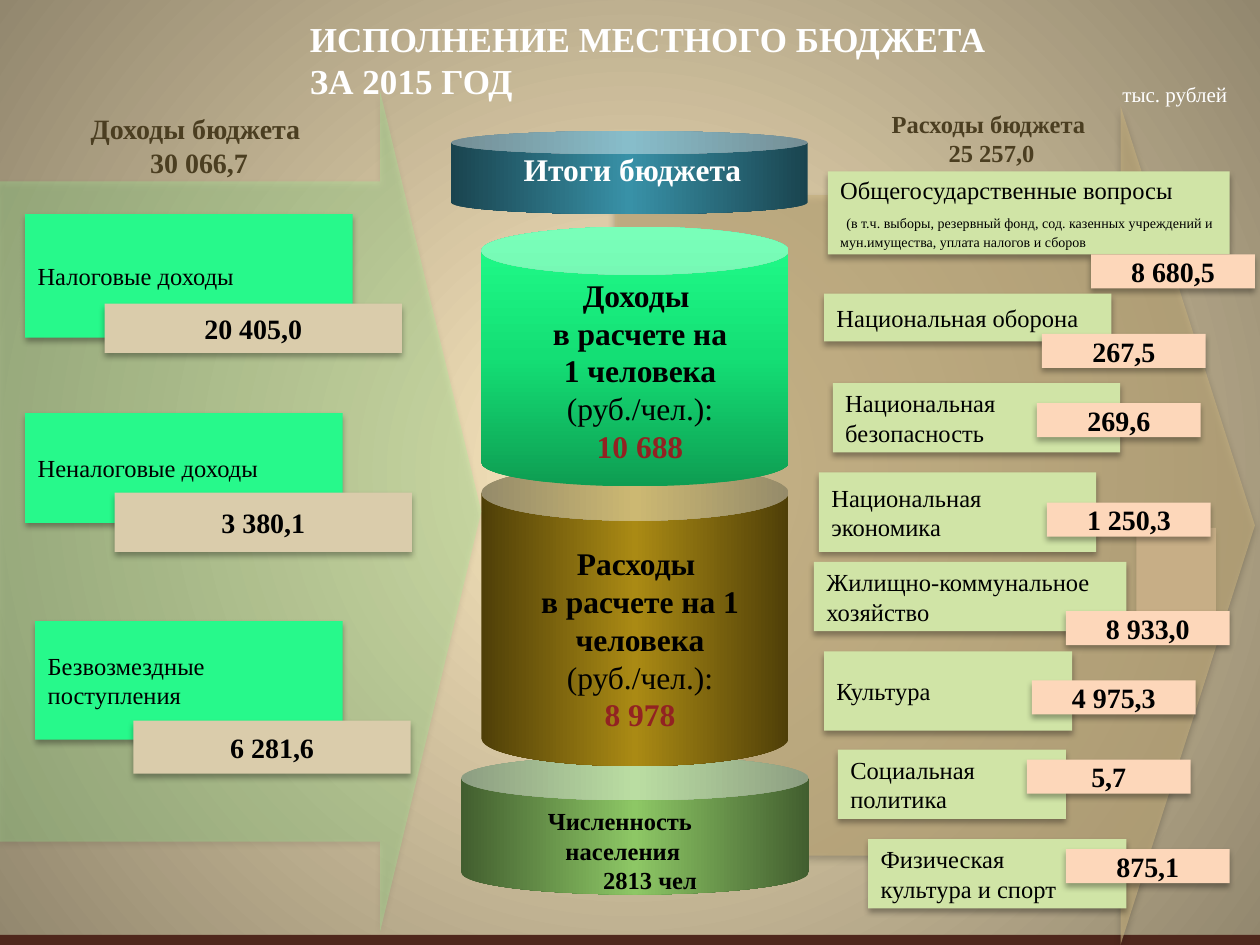
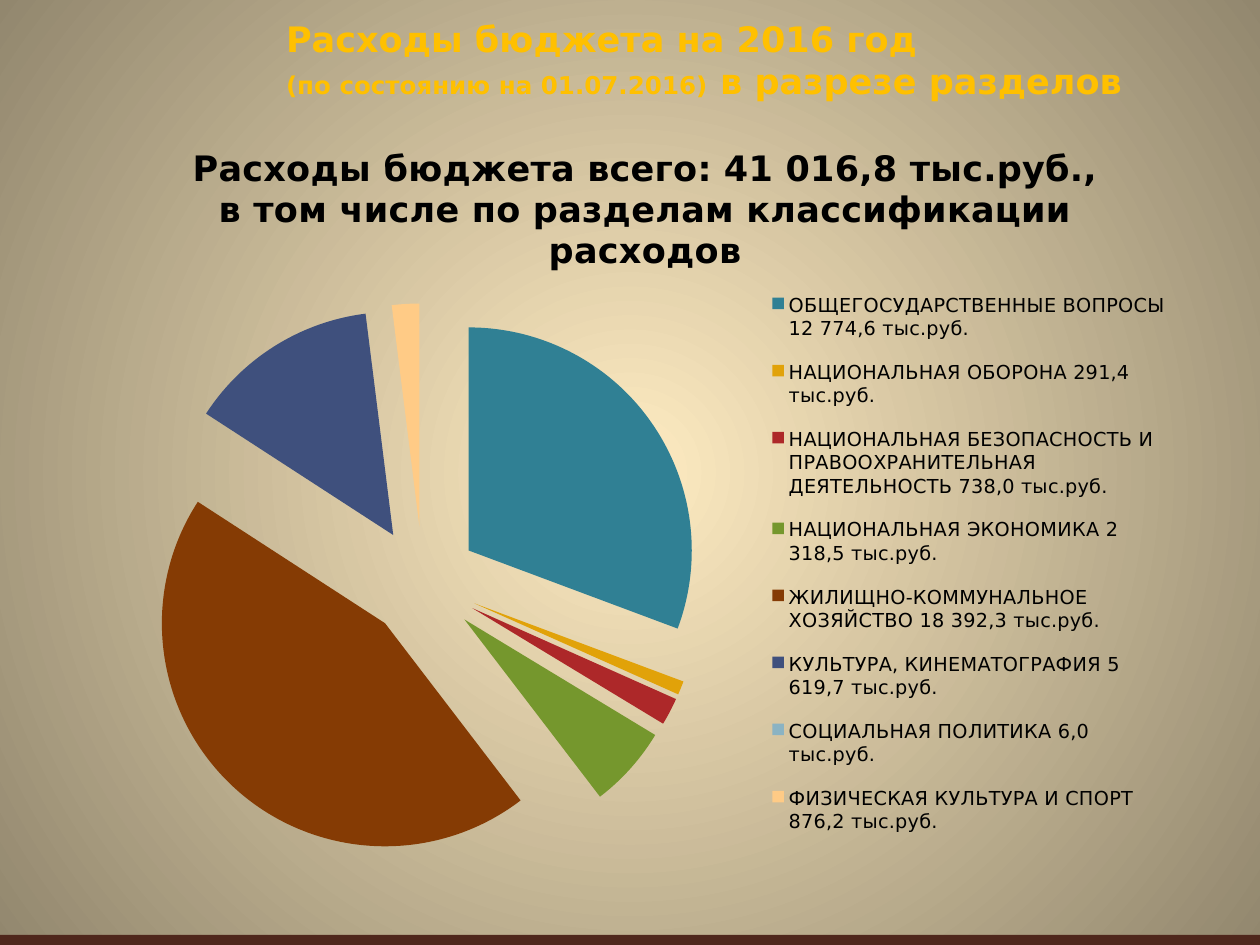
import copy

import pptx
import pptx.chart.data
import pptx.dml.color
import pptx.enum.chart
import pptx.enum.shapes
import pptx.enum.text
import pptx.oxml
import pptx.oxml.ns
import pptx.util

Inches = pptx.util.Inches
RGBColor = pptx.dml.color.RGBColor
SHAPE = pptx.enum.shapes.MSO_SHAPE
ANCHOR = pptx.enum.text.MSO_ANCHOR
LEFT = pptx.enum.text.PP_ALIGN.LEFT
CENTER = pptx.enum.text.PP_ALIGN.CENTER
qn = pptx.oxml.ns.qn
NS_A = pptx.oxml.ns.nsdecls("a")
NS_C = pptx.oxml.ns.nsdecls("c")

SERIF = "Times New Roman"
SANS = "DejaVu Sans"

WHITE = RGBColor(0xFF, 0xFF, 0xFF)
BLACK = RGBColor(0x00, 0x00, 0x00)
GLOW = RGBColor(0xFF, 0xEC, 0xC2)
EDGE = RGBColor(0x92, 0x87, 0x6E)
MAROON = RGBColor(0x4F, 0x27, 0x1C)
BROWN = RGBColor(0x4B, 0x3E, 0x21)
RED = RGBColor(0x92, 0x22, 0x22)
AMBER = RGBColor(0xFF, 0xC0, 0x00)
PEACH = RGBColor(0xFD, 0xD7, 0xBA)
SAND = RGBColor(0xDA, 0xCC, 0xAB)
KHAKI = RGBColor(0xC6, 0xB0, 0x7E)
MINT = RGBColor(0x99, 0xFF, 0x99)
GREEN = RGBColor(0x27, 0xF9, 0x8B)
LIME = RGBColor(0xD0, 0xE4, 0xA6)
MOSS = [RGBColor(0x42, 0x5E, 0x2F), RGBColor(0x8D, 0xC7, 0x65), RGBColor(0x42, 0x5E, 0x2F)]
GOLD = [RGBColor(0x4F, 0x3F, 0x08), RGBColor(0xAA, 0x8A, 0x14), RGBColor(0x4F, 0x3F, 0x08)]
EMERALD = [RGBColor(0x0E, 0x9D, 0x52), RGBColor(0x14, 0xDF, 0x75), RGBColor(0x21, 0xFF, 0x8B)]
TEAL = [RGBColor(0x1A, 0x44, 0x4F), RGBColor(0x38, 0x91, 0xA7), RGBColor(0x1A, 0x44, 0x4F)]


def write(frame, lines, size=14, color=BLACK, bold=False, font=SERIF,
          align=LEFT, anchor=ANCHOR.MIDDLE):
    """Fill a frame; a line is a text or a list of texts, "\n" and (text, format) pairs."""
    frame.word_wrap = True
    frame.auto_size = pptx.enum.text.MSO_AUTO_SIZE.NONE
    frame.vertical_anchor = anchor
    for number, line in enumerate(lines):
        paragraph = frame.add_paragraph() if number else frame.paragraphs[0]
        paragraph.alignment = align
        for piece in line if isinstance(line, list) else [line]:
            if piece == "\n":
                paragraph.add_line_break()
                continue
            text, special = piece if isinstance(piece, tuple) else (piece, {})
            run = paragraph.add_run()
            run.text = text
            run.font.name = font
            run.font.size = pptx.util.Pt(special.get("size", size))
            run.font.bold = special.get("bold", bold)
            run.font.color.rgb = special.get("color", color)


def add_block(slide, kind, at, fill, adjust=(), opacity=100, angle=0, shadow=True):
    """Add a borderless shape; a list of three colours as fill makes a gradient."""
    block = slide.shapes.add_shape(kind, *map(Inches, at))
    block.line.fill.background()
    block.shadow.inherit = False
    for number, value in enumerate(adjust):
        block.adjustments[number] = value
    if isinstance(fill, list):
        block.fill.gradient()
        block.fill.gradient_angle = angle
        stops = block.element.find(".//" + qn("a:gsLst"))
        middle = copy.deepcopy(stops[0])
        middle.set("pos", "50000")
        stops.insert(1, middle)
        for stop, color in zip(block.fill.gradient_stops, fill):
            stop.color.rgb = color
    else:
        block.fill.solid()
        block.fill.fore_color.rgb = fill
    if opacity < 100:
        block.element.find(".//" + qn("a:srgbClr")).append(pptx.oxml.parse_xml(
            f'<a:alpha {NS_A} val="{opacity * 1000}"/>'))
    if shadow:
        block.element.spPr.find(qn("a:effectLst")).append(pptx.oxml.parse_xml(
            f'<a:outerShdw {NS_A} blurRad="44450" dist="27940" dir="5400000" rotWithShape="0">'
            '<a:srgbClr val="000000"><a:alpha val="32000"/></a:srgbClr></a:outerShdw>'))
    return block


prs = pptx.Presentation()
prs.slide_width, prs.slide_height = Inches(10), Inches(7.5)
results, sections = [prs.slides.add_slide(prs.slide_layouts[5]) for _ in range(2)]

# Shared background and bottom band
master = prs.slide_master
backdrop = master.background.fill
backdrop.gradient()
for stop, color in zip(backdrop.gradient_stops, [GLOW, EDGE]):
    stop.color.rgb = color
gradient = master.element.find(".//" + qn("p:bg")).find(".//" + qn("a:gradFill"))
gradient.replace(gradient.find(qn("a:lin")), pptx.oxml.parse_xml(
    f'<a:path {NS_A} path="circle">'
    '<a:fillToRect l="50000" t="50000" r="50000" b="50000"/></a:path>'))
band = add_block(results, SHAPE.RECTANGLE, (0, 7.42, 10, 0.08), MAROON, shadow=False)
master.shapes.element.append(band.element)

# Titles
for slide, at, line, style in [
    (results, (2.36, 0.2, 7.64, 0.55),
     ["ИСПОЛНЕНИЕ МЕСТНОГО БЮДЖЕТА ", "\n", "ЗА 2015 ГОД"], dict(color=WHITE, font=SERIF)),
    (sections, (2.17, 0.29, 7.17, 0.37),
     ["Расходы бюджета на 2016 год ", "\n", ("(по состоянию на 01.07.2016)", {"size": 14}),
      " в разрезе разделов"], dict(color=AMBER, font=SANS)),
]:
    title = slide.shapes.title
    title.left, title.top, title.width, title.height = map(Inches, at)
    write(title.text_frame, [line], size=20, bold=True, **style)

# Slide 1: arrows and cylinders
add_block(results, SHAPE.RECTANGLE, (9.02, 4.19, 0.63, 0.82), PEACH)
add_block(results, SHAPE.RIGHT_ARROW, (4.88, 0.84, 5.08, 6.66), KHAKI, (0.787, 0.21), opacity=62)
for at, colors, lid, angle in [
    ((3.66, 6, 2.76, 1.1), MOSS, 0.32, 0),
    ((3.82, 3.69, 2.44, 2.39), GOLD, 0.185, 0),
    ((3.82, 1.8, 2.44, 2.06), EMERALD, 0.185, 90),
    ((3.58, 1.04, 2.83, 0.66), TEAL, 0.279, 0),
]:
    add_block(results, SHAPE.CAN, at, colors, [lid], angle=angle, shadow=False)
add_block(results, SHAPE.RIGHT_ARROW, (0, 0.73, 3.82, 6.66), MINT, (0.787, 0.21), opacity=26)

# Slide 1: captions
plain, total = {"bold": False}, {"color": RED}
heading = dict(bold=True, align=CENTER)
for at, lines, style in [
    ((3.82, 1.13, 2.4, 0.42), ["Итоги бюджета"], dict(heading, size=18, color=WHITE)),
    ((3.9, 4.27, 2.36, 1.92),
     ["Расходы ", "в расчете на 1 человека", [("(руб./чел.):", plain)], [("8 978", total)]],
     dict(heading, size=18, anchor=ANCHOR.TOP)),
    ((3.9, 2.14, 2.36, 1.92),
     ["Доходы ", "в расчете на", ["1 человека ", ("(руб./чел.):", plain)], [("10 688", total)]],
     dict(heading, size=18, anchor=ANCHOR.TOP)),
    ((0.2, 0.84, 2.76, 0.63), ["Доходы бюджета ", "30 066,7"],
     dict(heading, size=16, color=BROWN)),
    ((6.49, 0.89, 2.76, 0.41), ["Расходы бюджета ", "25 257,0"], dict(heading, color=BROWN)),
    ((8.81, 0.6, 1.19, 0.3), ["тыс. рублей"], dict(size=12, color=WHITE, anchor=ANCHOR.TOP)),
    ((4.06, 6.35, 2.2, 0.81), ["Численность", "населения", "2813 чел"],
     dict(bold=True, anchor=ANCHOR.TOP)),
]:
    caption = results.shapes.add_textbox(*map(Inches, at))
    write(caption.text_frame, lines, **style)
population = caption
for paragraph, indent in zip(population.element.findall(".//" + qn("a:p")), (0.19, 0.33)):
    paragraph.find(qn("a:pPr")).set("marL", str(Inches(indent)))
population.text_frame.paragraphs[2].alignment = CENTER

# Slide 1: budget items with their amounts
incomes = [
    ((0.2, 1.7, 2.6, 0.98), ["Налоговые доходы"], (0.83, 2.41, 2.36, 0.39), "20 405,0"),
    ((0.2, 3.28, 2.52, 0.87), ["Неналоговые доходы"], (0.91, 3.91, 2.36, 0.47), "3 380,1"),
    ((0.28, 4.93, 2.44, 0.94), ["Безвозмездные поступления"], (1.06, 5.72, 2.2, 0.42), "6 281,6"),
]
details = ("(в т.ч. выборы, резервный фонд, сод. казенных учреждений и мун.имущества, "
           "уплата налогов и сборов")
tag_size = (1.3, 0.27)
expenses = [
    ((6.57, 1.36, 3.19, 0.66), ["Общегосударственные вопросы", [" ", (details, {"size": 8})]],
     (8.66, 2.02, *tag_size), "8 680,5"),
    ((6.54, 2.33, 2.28, 0.38), ["Национальная оборона"], (8.27, 2.65, *tag_size), "267,5"),
    ((6.61, 3.04, 2.28, 0.55), ["Национальная безопасность"], (8.23, 3.2, *tag_size), "269,6"),
    ((6.5, 3.75, 2.2, 0.63), ["Национальная", "экономика"], (8.31, 3.99, *tag_size), "1 250,3"),
    ((6.46, 4.46, 2.48, 0.55), ["Жилищно-коммунальное хозяйство"],
     (8.46, 4.85, *tag_size), "8 933,0"),
    ((6.54, 5.17, 1.97, 0.63), ["Культура"], (8.19, 5.4, *tag_size), "4 975,3"),
    ((6.65, 5.95, 1.81, 0.55), ["Социальная", "политика"], (8.15, 6.03, *tag_size), "5,7"),
    ((6.89, 6.66, 2.05, 0.55), ["Физическая", "культура и спорт"],
     (8.46, 6.74, *tag_size), "875,1"),
]
for items, item_color, amount_color in [(incomes, GREEN, SAND), (expenses, LIME, PEACH)]:
    for item_at, lines, amount_at, amount in items:
        item = add_block(results, SHAPE.RECTANGLE, item_at, item_color)
        write(item.text_frame, lines)
        tag = add_block(results, SHAPE.RECTANGLE, amount_at, amount_color)
        write(tag.text_frame, [amount], size=16, bold=True, align=CENTER)

# Slide 2: sections with their amounts and shares in percent
spending = [
    ("ОБЩЕГОСУДАРСТВЕННЫЕ ВОПРОСЫ", "12 774,6", 31, RGBColor(0x30, 0x80, 0x94)),
    ("НАЦИОНАЛЬНАЯ ОБОРОНА", "291,4", 1, RGBColor(0xE1, 0xA2, 0x09)),
    ("НАЦИОНАЛЬНАЯ БЕЗОПАСНОСТЬ И ПРАВООХРАНИТЕЛЬНАЯ ДЕЯТЕЛЬНОСТЬ", "738,0", 2,
     RGBColor(0xAD, 0x28, 0x29)),
    ("НАЦИОНАЛЬНАЯ ЭКОНОМИКА", "2 318,5", 6, RGBColor(0x75, 0x97, 0x2D)),
    ("ЖИЛИЩНО-КОММУНАЛЬНОЕ ХОЗЯЙСТВО", "18 392,3", 45, RGBColor(0x85, 0x3B, 0x04)),
    ("КУЛЬТУРА, КИНЕМАТОГРАФИЯ", "5 619,7", 14, RGBColor(0x3F, 0x50, 0x7D)),
    ("СОЦИАЛЬНАЯ ПОЛИТИКА", "6,0", 0, RGBColor(0x8A, 0xB3, 0xC3)),
    ("ФИЗИЧЕСКАЯ КУЛЬТУРА И СПОРТ", "876,2", 2, RGBColor(0xFF, 0xCB, 0x86)),
]
chart_title = ["Расходы бюджета всего: 41 016,8 тыс.руб.,",
               "в том числе по разделам классификации расходов"]
data = pptx.chart.data.CategoryChartData()
data.categories = [f"{section} {amount} тыс.руб." for section, amount, _, _ in spending]
data.add_series(" ".join(chart_title), [share for _, _, share, _ in spending])
chart = sections.shapes.add_chart(
    pptx.enum.chart.XL_CHART_TYPE.PIE, *map(Inches, (0.43, 1.07, 9.29, 6.14)), data).chart
chart.font.name = SANS
chart.font.size = pptx.util.Pt(18)
chart.font.color.rgb = BLACK
chart.has_title = True
write(chart.chart_title.text_frame, chart_title, size=20, bold=True, font=SANS, align=CENTER)
chart.has_legend = True
chart.legend.position = pptx.enum.chart.XL_LEGEND_POSITION.RIGHT
chart.legend.include_in_layout = False
chart.legend.font.size = pptx.util.Pt(11)

pie = chart.plots[0]
pie.vary_by_categories = True
for number, (_, _, _, color) in enumerate(spending):
    slice_fill = pie.series[0].points[number].format.fill
    slice_fill.solid()
    slice_fill.fore_color.rgb = color
chart.element.find(".//" + qn("c:ser")).find(qn("c:tx")).addnext(
    pptx.oxml.parse_xml(f'<c:explosion {NS_C} val="25"/>'))

for area, index, target, position in [
    ("c:title", 1, "", (0.115, 0.01)),
    ("c:plotArea", 0, '<c:layoutTarget val="inner"/>', (0.016, 0.218, 0.598, 0.721)),
    ("c:legend", 1, "", (0.608, 0.18, 0.347, 0.75)),
]:
    parent = chart.element.find(".//" + qn(area))
    for old in parent.findall(qn("c:layout")):
        parent.remove(old)
    sides = "".join(f'<c:{side} val="{value}"/>' for side, value in zip("xywh", position))
    parent.insert(index, pptx.oxml.parse_xml(
        f'<c:layout {NS_C}><c:manualLayout>{target}<c:xMode val="edge"/>'
        f'<c:yMode val="edge"/>{sides}</c:manualLayout></c:layout>'))

prs.save("out.pptx")
